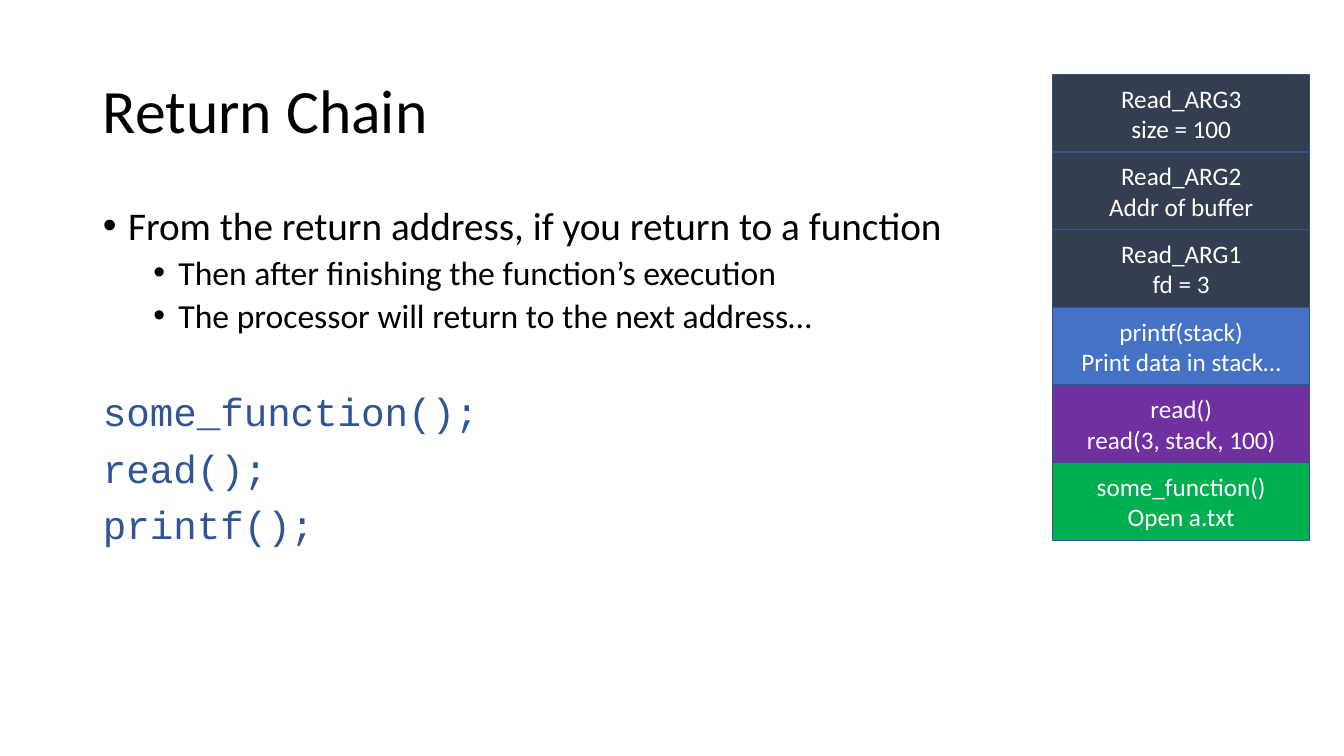
from lxml import etree
from pptx import Presentation
from pptx.dml.color import RGBColor
from pptx.enum import shapes, text
from pptx.oxml.ns import qn
from pptx.util import Inches, Pt

BLACK = RGBColor(0, 0, 0)
WHITE = RGBColor(0xFF, 0xFF, 0xFF)
CODE_BLUE = RGBColor(0x2F, 0x55, 0x97)
BORDER = RGBColor(0x32, 0x54, 0x91)
SLATE = RGBColor(0x33, 0x3F, 0x50)
BLUE = RGBColor(0x44, 0x72, 0xC4)
PURPLE = RGBColor(0x70, 0x30, 0xA0)
GREEN = RGBColor(0x00, 0xB0, 0x50)

TITLE = "Return Chain"
# text, level, space before in points
BULLETS = [
    ("From the return address, if you return to a function", 0, 0),
    ("Then after finishing the function’s execution", 1, 5),
    ("The processor will return to the next address…", 1, 5),
]
CODE = [("some_function();", 41), ("read();", 10), ("printf();", 10)]
# stack cells from top to bottom
STACK = [
    (("Read_ARG3", "size = 100"), SLATE),
    (("Read_ARG2", "Addr of buffer"), SLATE),
    (("Read_ARG1", "fd = 3"), SLATE),
    (("printf(stack)", "Print data in stack…"), BLUE),
    (("read()", "read(3, stack, 100)"), PURPLE),
    (("some_function()", "Open a.txt"), GREEN),
]
STACK_LEFT, STACK_TOP, CELL_WIDTH, CELL_HEIGHT = 10.44, 0.74, 2.55, 0.77


def place(shape, left, top, width, height):
    shape.left, shape.top = Inches(left), Inches(top)
    shape.width, shape.height = Inches(width), Inches(height)


def set_font(para, name, size, color):
    para.font.name = name
    para.font.size = Pt(size)
    para.font.color.rgb = color


def add_lines(frame, lines):
    """Write one paragraph per line and return the paragraphs."""
    frame.text = "\n".join(lines)
    return frame.paragraphs


def set_bullet(para, left, hanging, mark=None):
    props = para._p.get_or_add_pPr()
    props.set("marL", str(Inches(left)))
    props.set("indent", str(-Inches(hanging)))
    if mark:
        etree.SubElement(props, qn("a:buFont")).set("typeface", "Arial")
        etree.SubElement(props, qn("a:buChar")).set("char", mark)
    else:
        etree.SubElement(props, qn("a:buNone"))


def fill_title(title):
    place(title, 0.92, 0.4, 11.5, 1.45)
    frame = title.text_frame
    frame.auto_size = text.MSO_AUTO_SIZE.NONE
    frame.vertical_anchor = text.MSO_ANCHOR.MIDDLE
    para = add_lines(frame, [TITLE])[0]
    para.alignment = text.PP_ALIGN.LEFT
    para.line_spacing = 0.9
    set_font(para, "Calibri", 44, BLACK)


def fill_body(body):
    place(body, 0.92, 2, 9.39, 4.76)
    frame = body.text_frame
    frame.auto_size = text.MSO_AUTO_SIZE.NONE
    paras = add_lines(frame, [row[0] for row in BULLETS + CODE])
    for para, (_, level, before) in zip(paras, BULLETS):
        para.level = level
        set_bullet(para, 0.25 + 0.5 * level, 0.25, "•")
        para.space_before = Pt(before)
        set_font(para, "Calibri", 28 - 4 * level, BLACK)
    for para, (_, before) in zip(paras[len(BULLETS):], CODE):
        set_bullet(para, 0, 0)
        para.space_before = Pt(before)
        set_font(para, "Courier New", 28, CODE_BLUE)
    for para in paras:
        para.line_spacing = 0.9


def add_cell(slide, row, lines, color):
    cell = slide.shapes.add_shape(
        shapes.MSO_SHAPE.RECTANGLE,
        Inches(STACK_LEFT), Inches(STACK_TOP + row * CELL_HEIGHT),
        Inches(CELL_WIDTH), Inches(CELL_HEIGHT))
    cell.shadow.inherit = False
    cell.fill.solid()
    cell.fill.fore_color.rgb = color
    cell.line.color.rgb = BORDER
    cell.line.width = Pt(1)
    cell.text_frame.word_wrap = True
    cell.text_frame.vertical_anchor = text.MSO_ANCHOR.MIDDLE
    for para in add_lines(cell.text_frame, lines):
        para.alignment = text.PP_ALIGN.CENTER
        set_font(para, "Calibri", 18, WHITE)


def main():
    deck = Presentation()
    deck.slide_width, deck.slide_height = Inches(13.33), Inches(7.5)
    slide = deck.slides.add_slide(deck.slide_layouts[1])
    fill_title(slide.shapes.title)
    fill_body(slide.placeholders[1])
    for row, (lines, color) in enumerate(STACK):
        add_cell(slide, row, lines, color)
    deck.save("out.pptx")


if __name__ == "__main__":
    main()
